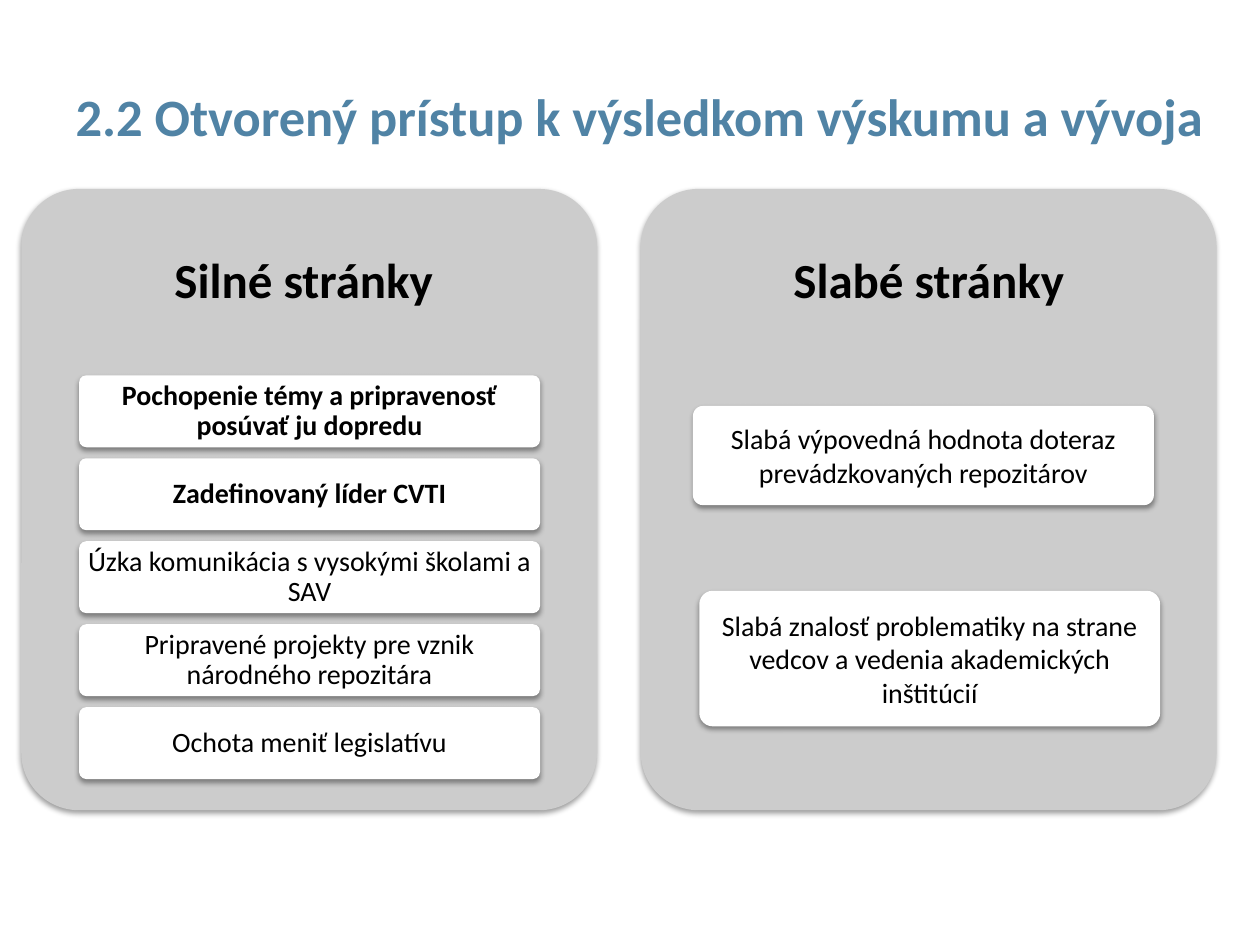
from dataclasses import dataclass

from lxml.etree import SubElement
from pptx import Presentation
from pptx.dml.color import RGBColor
from pptx.enum.shapes import MSO_SHAPE as Preset
from pptx.enum.text import MSO_ANCHOR as Anchor, PP_ALIGN as Align
from pptx.oxml.ns import qn
from pptx.util import Pt


@dataclass(frozen=True)
class Theme:
    font: str = "Calibri"
    title: RGBColor = RGBColor(0x50, 0x83, 0xA5)
    ink: RGBColor = RGBColor(0, 0, 0)
    panel: RGBColor = RGBColor(0xCC, 0xCC, 0xCC)
    card: RGBColor = RGBColor(0xFF, 0xFF, 0xFF)
    title_size: int = 30
    heading_size: int = 28
    card_size: int = 16


theme = Theme()

PANEL_TOP, PANEL_WIDTH, PANEL_HEIGHT = 108, 329, 355
HEADING_HEIGHT = 106.5
CARD_WIDTH, CARD_HEIGHT, CARD_PITCH = 263.4, 41.1, 47.4
FIRST_CARD_TOP = 214.5

strengths = [
    ("Pochopenie témy a pripravenosť posúvať ju dopredu", True),
    ("Zadefinovaný líder CVTI", True),
    ("Úzka komunikácia s vysokými školami a SAV", False),
    ("Pripravené projekty pre vznik národného repozitára", False),
    ("Ochota meniť legislatívu", False),
]
# Each card: text, bold, left, top, height, line spacing
strength_cards = [
    (text, bold, 45.2, FIRST_CARD_TOP + row * CARD_PITCH, CARD_HEIGHT, 0.9)
    for row, (text, bold) in enumerate(strengths)
]
weakness_cards = [
    ("Slabá výpovedná hodnota doteraz prevádzkovaných repozitárov",
     False, 396, 232, 56.7, 1.0),
    ("Slabá znalosť problematiky na strane vedcov a vedenia akademických inštitúcií",
     False, 399.6, 337.6, 77.5, 1.0),
]
panels = [
    (12.2, "Silné stránky ", strength_cards),
    (366.2, "Slabé stránky", weakness_cards),
]


def add_rounded(left, top, width, height, color):
    """Add a borderless rounded rectangle with a soft shadow below it."""
    shape = page.shapes.add_shape(
        Preset.ROUNDED_RECTANGLE, Pt(left), Pt(top), Pt(width), Pt(height))
    shape.adjustments[0] = 0.1
    shape.fill.solid()
    shape.fill.fore_color.rgb = color
    shape.line.fill.background()
    shape.shadow.inherit = False
    effects = shape.element.spPr.find(qn("a:effectLst"))
    shadow = SubElement(
        effects, qn("a:outerShdw"), blurRad=str(Pt(3.1)), dist=str(Pt(1.6)),
        dir="5400000", rotWithShape="0")
    shade = SubElement(shadow, qn("a:srgbClr"), val=str(theme.ink))
    SubElement(shade, qn("a:alpha"), val="38000")
    return shape


def write(shape, text, size, bold, color, align, spacing, inset_x, inset_y):
    frame = shape.text_frame
    frame.word_wrap = True
    frame.vertical_anchor = Anchor.MIDDLE
    frame.margin_left = frame.margin_right = Pt(inset_x)
    frame.margin_top = frame.margin_bottom = Pt(inset_y)
    frame.text = text
    paragraph = frame.paragraphs[0]
    paragraph.alignment = align
    paragraph.line_spacing = spacing
    font = paragraph.font
    font.name, font.size, font.bold = theme.font, Pt(size), bold
    font.color.rgb = color


deck = Presentation()
deck.slide_width, deck.slide_height = Pt(720), Pt(540)
page = deck.slides.add_slide(deck.slide_layouts[5])

title = page.shapes.title
title.left, title.top, title.width, title.height = Pt(36), Pt(24), Pt(660), Pt(84)
write(title, "2.2 Otvorený prístup k výsledkom výskumu a vývoja",
      theme.title_size, True, theme.title, Align.LEFT, 1.0, 7.2, 3.6)

for panel_left, heading, cards in panels:
    add_rounded(panel_left, PANEL_TOP, PANEL_WIDTH, PANEL_HEIGHT, theme.panel)
    heading_box = page.shapes.add_textbox(
        Pt(panel_left), Pt(PANEL_TOP), Pt(PANEL_WIDTH), Pt(HEADING_HEIGHT))
    write(heading_box, heading, theme.heading_size, True, theme.ink,
          Align.CENTER, 0.9, 8.4, 8.4)
    for text, bold, left, top, height, spacing in cards:
        card = add_rounded(left, top, CARD_WIDTH, height, theme.card)
        write(card, text, theme.card_size, bold, theme.ink,
              Align.CENTER, spacing, 3, 2.25)

deck.save("out.pptx")
